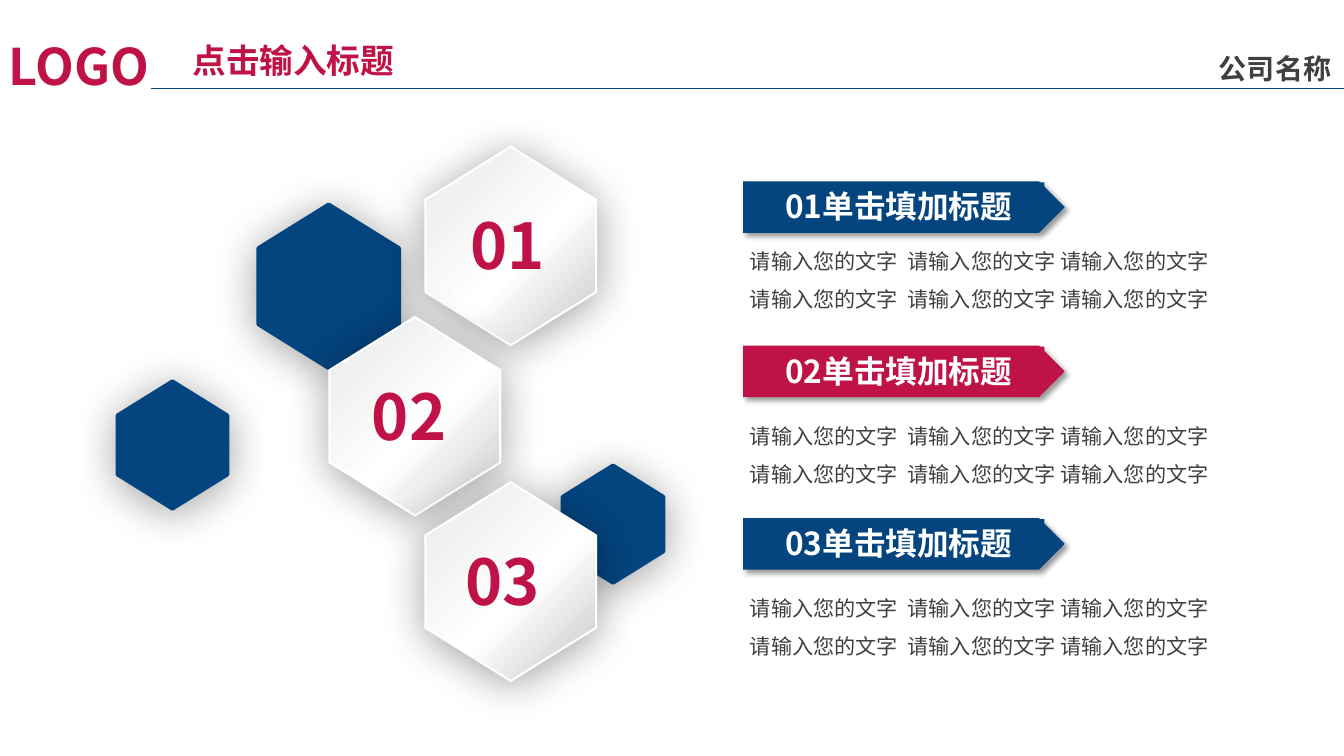
from lxml import etree
from pptx import Presentation, util as u
from pptx.dml import color
from pptx.enum import shapes, text
from pptx.oxml import ns

BLUE, RED, GREY, WHITE = "04447F", "BF1347", "404040", "FFFFFF"
FONT = "Noto Sans CJK SC"
SILVER = [(6, "CCCCCC"), (43, "FFFFFF"), (80, "F1F1F1"), (100, "E4E4E4")]
TOP, MIDDLE = text.MSO_ANCHOR.TOP, text.MSO_ANCHOR.MIDDLE


def rgb(value):
    return color.RGBColor.from_string(value)


def add_xml(parent, tag, **attributes):
    child = etree.SubElement(parent, ns.qn(tag))
    for name, value in attributes.items():
        child.set(name, str(value))
    return child


def write(sp, words, size, colour, bold=True, insets=(0, 0), anchor=TOP,
          spacing=None, wrap=True, grow=False):
    tf = sp.text_frame
    tf.word_wrap = wrap
    tf.auto_size = (text.MSO_AUTO_SIZE.SHAPE_TO_FIT_TEXT if grow
                    else text.MSO_AUTO_SIZE.NONE)
    tf.vertical_anchor = anchor
    tf.margin_left = tf.margin_right = u.Inches(insets[0])
    tf.margin_top = tf.margin_bottom = u.Inches(insets[1])
    p = tf.paragraphs[0]
    p.alignment = text.PP_ALIGN.LEFT
    if spacing:
        p.line_spacing = spacing
    r = p.add_run()
    r.text = words
    r.font.size = u.Pt(size)
    r.font.bold = bold
    r.font.name = FONT
    r.font.color.rgb = rgb(colour)
    add_xml(r.font._element, "a:ea", typeface=FONT)


class Deck:
    def __init__(self):
        self.prs = Presentation()
        self.prs.slide_width = u.Inches(13.33)
        self.prs.slide_height = u.Inches(7.5)
        self.s = self.prs.slides.add_slide(self.prs.slide_layouts[5])

    def title(self, words, box, size, colour):
        sp = self.s.shapes.title
        sp.left, sp.top, sp.width, sp.height = map(u.Inches, box)
        write(sp, words, size, colour, insets=(0.08, 0.04), anchor=MIDDLE,
              wrap=False, grow=True)

    def text(self, words, box, size, colour, **style):
        sp = self.s.shapes.add_textbox(*map(u.Inches, box))
        write(sp, words, size, colour, **style)

    def shape(self, kind, box, fill=None):
        sp = self.s.shapes.add_shape(kind, *map(u.Inches, box))
        sp.shadow.inherit = False
        if fill:
            sp.fill.solid()
            sp.fill.fore_color.rgb = rgb(fill)
            sp.line.fill.background()
        return sp

    def shadow(self, sp, alpha, blur, distance, angle):
        effects = sp._element.spPr.find(ns.qn("a:effectLst"))
        outer = add_xml(effects, "a:outerShdw", blurRad=u.Pt(blur),
                        dist=u.Pt(distance), dir=angle * 60000,
                        algn="ctr", rotWithShape=0)
        black = add_xml(outer, "a:srgbClr", val="000000")
        add_xml(black, "a:alpha", val=alpha * 1000)

    def gradient(self, sp, stops, angle):
        spPr = sp._element.spPr
        grad = add_xml(spPr, "a:gradFill", rotWithShape=1)
        stop_list = add_xml(grad, "a:gsLst")
        for position, colour in stops:
            stop = add_xml(stop_list, "a:gs", pos=position * 1000)
            add_xml(stop, "a:srgbClr", val=colour)
        add_xml(grad, "a:lin", ang=angle * 60000, scaled=0)
        spPr.find(ns.qn("a:prstGeom")).addnext(grad)

    def hexagon(self, box, fill=None):
        sp = self.shape(shapes.MSO_SHAPE.HEXAGON, box, fill)
        sp.rotation = 90
        sp.adjustments[0] = 0.31
        sp.adjustments[1] = 1.15
        if not fill:
            self.gradient(sp, SILVER, 135)
        sp.line.color.rgb = rgb(fill or WHITE)
        sp.line.width = u.Pt(3 if fill else 1.5)
        if fill:
            add_xml(sp.line._ln, "a:round")
        self.shadow(sp, 37, 31, 3, 90)

    def banner(self, words, top, fill):
        sp = self.shape(shapes.MSO_SHAPE.PENTAGON, (7.37, top, 3.19, 0.51), fill)
        self.shadow(sp, 40, 4, 3, 45)
        label = self.shape(shapes.MSO_SHAPE.RECTANGLE,
                           (7.69, top + 0.01, 2.67, 0.44), fill)
        write(label, words, 22.6, WHITE, insets=(0.1, 0.05))

    def rule(self, x1, x2, y, colour):
        line = self.s.shapes.add_connector(
            shapes.MSO_CONNECTOR.STRAIGHT, *map(u.Inches, (x1, y, x2, y)))
        line.line.color.rgb = rgb(colour)
        line.line.width = u.Pt(1)
        add_xml(line._element.spPr, "a:effectLst")


def main():
    deck = Deck()
    for box in ((5.5, 4.7, 1.16, 1), (2.45, 2.14, 1.62, 1.4),
                (1.08, 3.87, 1.26, 1.09)):
        deck.hexagon(box, BLUE)

    numbers = [("01", 4.08, 1.59, 4.57), ("02", 3.13, 3.28, 3.59),
               ("03", 4.08, 4.92, 4.52)]
    for number, left, top, number_left in numbers:
        deck.hexagon((left, top, 1.97, 1.7))
        deck.text(number, (number_left, top + 0.46, 1.09, 0.91), 45.1, RED,
                  insets=(0.1, 0))

    line = "请输入您的文字  请输入您的文字 请输入您的文字"
    sections = [("01", 1.8, 2.29, BLUE), ("02", 3.43, 4.02, RED),
                ("03", 5.14, 5.73, BLUE)]
    for number, top, body_top, fill in sections:
        deck.banner(number + "单击填加标题", top, fill)
        deck.text(line * 2, (7.34, body_top, 4.84, 0.82), 15.1, GREY,
                  bold=False, insets=(0.1, 0.05), spacing=1.5, grow=True)

    deck.rule(1.5, 13.33, 0.88, BLUE)
    deck.title("点击输入标题", (1.83, 0.36, 2.17, 0.48), 24, RED)
    for words, box, size, colour in (
            ("公司名称", (12.01, 0.47, 1.32, 0.41), 20, GREY),
            ("LOGO", (0, 0.31, 1.64, 0.68), 36, RED)):
        deck.text(words, box, size, colour, insets=(0.08, 0.04),
                  anchor=MIDDLE, wrap=False, grow=True)
    deck.prs.save("out.pptx")


if __name__ == "__main__":
    main()
